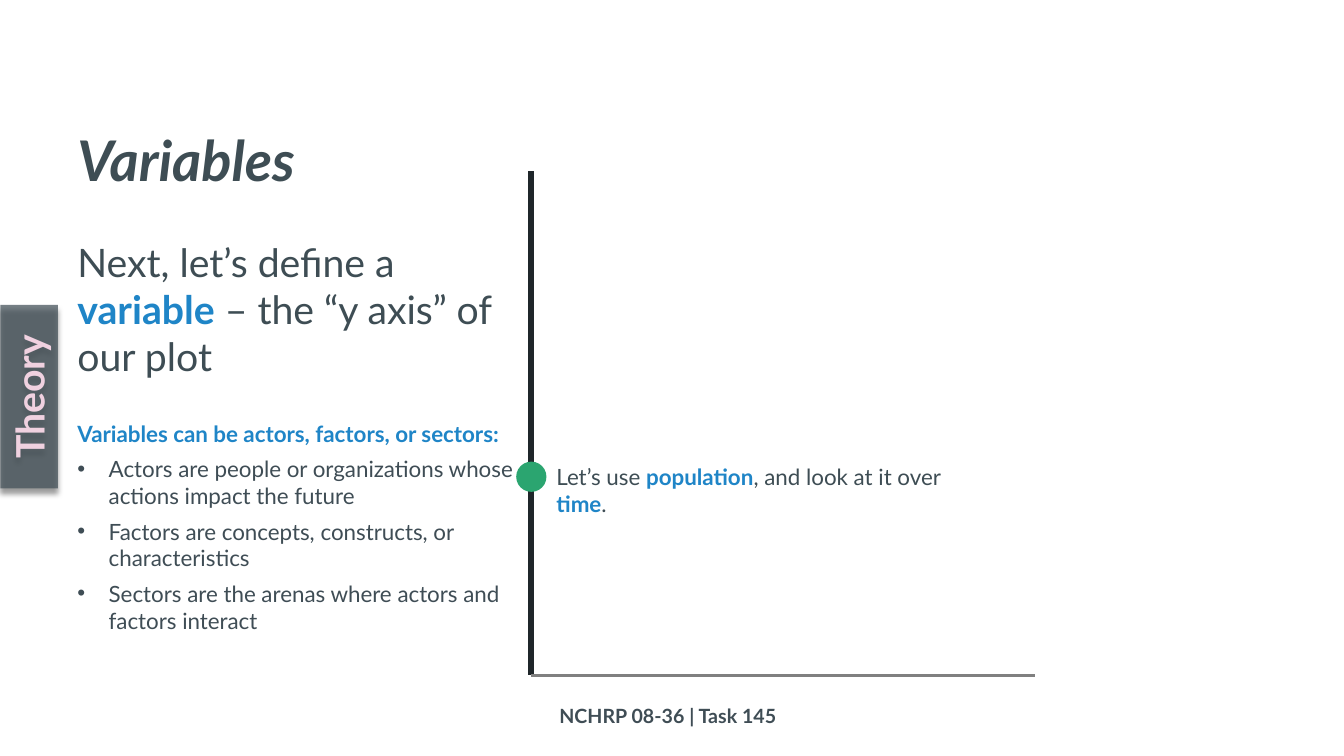
from lxml import etree
from pptx import Presentation
from pptx.dml.color import RGBColor
from pptx.enum.shapes import MSO_CONNECTOR as CONNECTOR, MSO_SHAPE as SHAPE
from pptx.enum.text import MSO_ANCHOR as ANCHOR, PP_ALIGN as ALIGN
from pptx.oxml.ns import qn
from pptx.util import Inches, Pt

FONT = "Lato"
SLATE = RGBColor(0x3F, 0x4D, 0x55)
TITLE_SLATE = RGBColor(0x3E, 0x4D, 0x54)
BLUE = RGBColor(0x1F, 0x85, 0xC7)
GREEN = RGBColor(0x2B, 0xA5, 0x70)
PINK = RGBColor(0xF0, 0xD1, 0xE0)
NEAR_BLACK = RGBColor(0x1F, 0x26, 0x2A)
GRAY = RGBColor(0x80, 0x80, 0x80)


def add_text(paragraph, text, size=16, color=SLATE, bold=False, italic=False):
    run = paragraph.add_run()
    run.text = text
    font = run.font
    font.name, font.size, font.bold, font.italic = FONT, Pt(size), bold, italic
    font.color.rgb = color


def add_marked_text(paragraph, text, **text_format):
    """Text between asterisks becomes bold and blue."""
    for index, part in enumerate(text.split("*")):
        emphasis = {"color": BLUE, "bold": True} if index % 2 else {}
        add_text(paragraph, part, **{**text_format, **emphasis})


def add_box(slide, left, top, width, height, wrap=True):
    box = slide.shapes.add_textbox(Inches(left), Inches(top), Inches(width), Inches(height))
    box.text_frame.word_wrap = wrap
    return box.text_frame


def add_bullet(paragraph, indent=0.31):
    properties = paragraph._p.get_or_add_pPr()
    properties.set("marL", str(Inches(indent)))
    properties.set("indent", str(Inches(-indent)))
    etree.SubElement(properties, qn("a:buFont"), typeface="Arial")
    etree.SubElement(properties, qn("a:buChar"), char="•")


def add_title(slide, left, top, width, height):
    frame = add_box(slide, left, top, width, height)
    frame.margin_top = Inches(0.08)
    add_text(frame.paragraphs[0], "Variables", size=40, color=TITLE_SLATE, bold=True, italic=True)
    lead = frame.add_paragraph()
    lead.space_before = Pt(32)
    add_marked_text(lead, "Next, let’s define a *variable* – the “y axis” of our plot",
                    size=28, color=TITLE_SLATE)


def add_definitions(slide, left, top, width, height):
    frame = add_box(slide, left, top, width, height)
    heading = frame.paragraphs[0]
    heading.space_after = Pt(6)
    add_text(heading, "Variables can be actors, factors, or sectors:", color=BLUE, bold=True)
    for definition in (
        "Actors are people or organizations whose actions impact the future",
        "Factors are concepts, constructs, or characteristics",
        "Sectors are the arenas where actors and factors interact",
    ):
        paragraph = frame.add_paragraph()
        paragraph.space_after = Pt(6)
        add_bullet(paragraph)
        add_text(paragraph, definition)


def add_axis(slide, start, end, color, weight):
    points = [Inches(value) for value in (*start, *end)]
    axis = slide.shapes.add_connector(CONNECTOR.STRAIGHT, *points)
    axis.line.color.rgb = color
    axis.line.width = Pt(weight)
    etree.SubElement(axis._element.spPr, qn("a:effectLst"))


def add_plot(slide, left, top, size):
    """Draw both axes, the marker on the y axis and its label."""
    bottom, marker, marker_y = top + size, 0.3, top + 3.03
    add_axis(slide, (left, top), (left, bottom), NEAR_BLACK, 4.5)
    add_axis(slide, (left, bottom), (left + size, bottom), GRAY, 2.25)
    dot = slide.shapes.add_shape(SHAPE.OVAL, Inches(left - marker / 2),
                                 Inches(marker_y - marker / 2), Inches(marker), Inches(marker))
    dot.shadow.inherit = False
    dot.fill.solid()
    dot.fill.fore_color.rgb = GREEN
    dot.line.fill.background()
    label = add_box(slide, left + marker / 2, marker_y - 0.18, 4.35, 0.37)
    add_marked_text(label.paragraphs[0], "Let’s use *population*, and look at it over *time*.",
                    color=TITLE_SLATE)


def add_section_tab(slide, left, top, width, height):
    """Draw the tab turned to read upward; the box is the one before turning."""
    tab = slide.shapes.add_shape(SHAPE.RECTANGLE, Inches(left), Inches(top),
                                 Inches(width), Inches(height))
    tab.rotation = 270
    tab.fill.solid()
    tab.fill.fore_color.rgb = SLATE
    tab.line.fill.background()
    tab.shadow.inherit = False
    properties = tab._element.spPr
    fill_color = properties.find(qn("a:solidFill")).find(qn("a:srgbClr"))
    etree.SubElement(fill_color, qn("a:alpha"), val="71000")
    shadow = etree.SubElement(properties.find(qn("a:effectLst")), qn("a:outerShdw"),
                              blurRad=str(Pt(4)), dist=str(Pt(4)), dir="5400000", rotWithShape="0")
    shadow_color = etree.SubElement(shadow, qn("a:srgbClr"), val="000000")
    etree.SubElement(shadow_color, qn("a:alpha"), val="55000")
    frame = tab.text_frame
    frame.word_wrap = True
    frame.vertical_anchor = ANCHOR.TOP
    frame.paragraphs[0].alignment = ALIGN.CENTER
    add_text(frame.paragraphs[0], "Theory", size=28, color=PINK, bold=True)


def add_footer(slide, left, top, width, height):
    frame = add_box(slide, left, top, width, height, wrap=False)
    add_text(frame.paragraphs[0], "NCHRP 08-36 | Task 145", size=14, bold=True)


def main():
    presentation = Presentation()
    presentation.slide_width, presentation.slide_height = Inches(13.33), Inches(7.5)
    slide = presentation.slides.add_slide(presentation.slide_layouts[6])
    add_footer(slide, 5.45, 6.93, 2.44, 0.34)
    add_title(slide, 0.67, 1.17, 4.37, 5.53)
    add_plot(slide, 5.27, 1.7, 5)
    add_definitions(slide, 0.67, 4.12, 4.55, 2.24)
    add_section_tab(slide, -0.62, 3.65, 1.82, 0.57)
    presentation.save("out.pptx")


if __name__ == "__main__":
    main()
